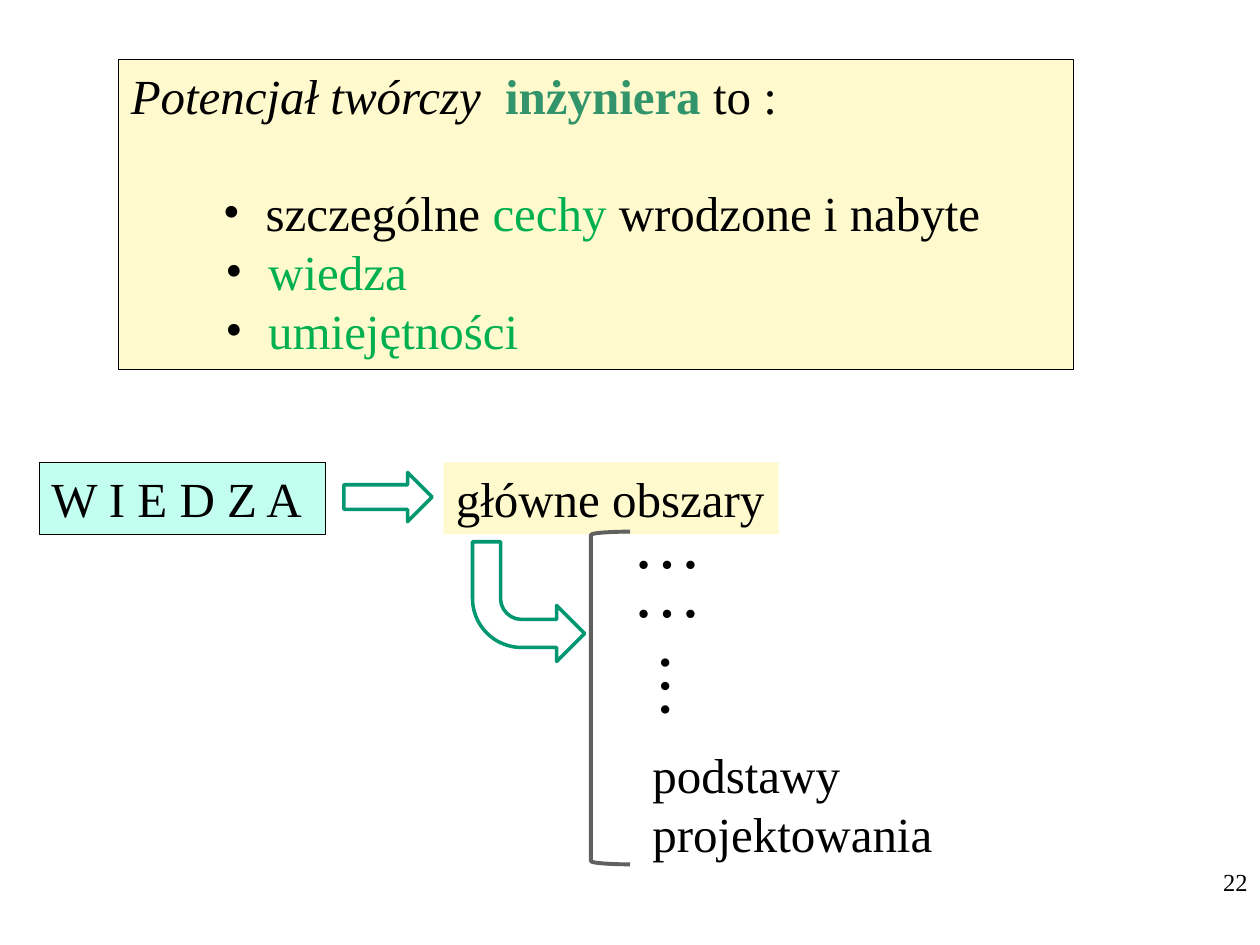
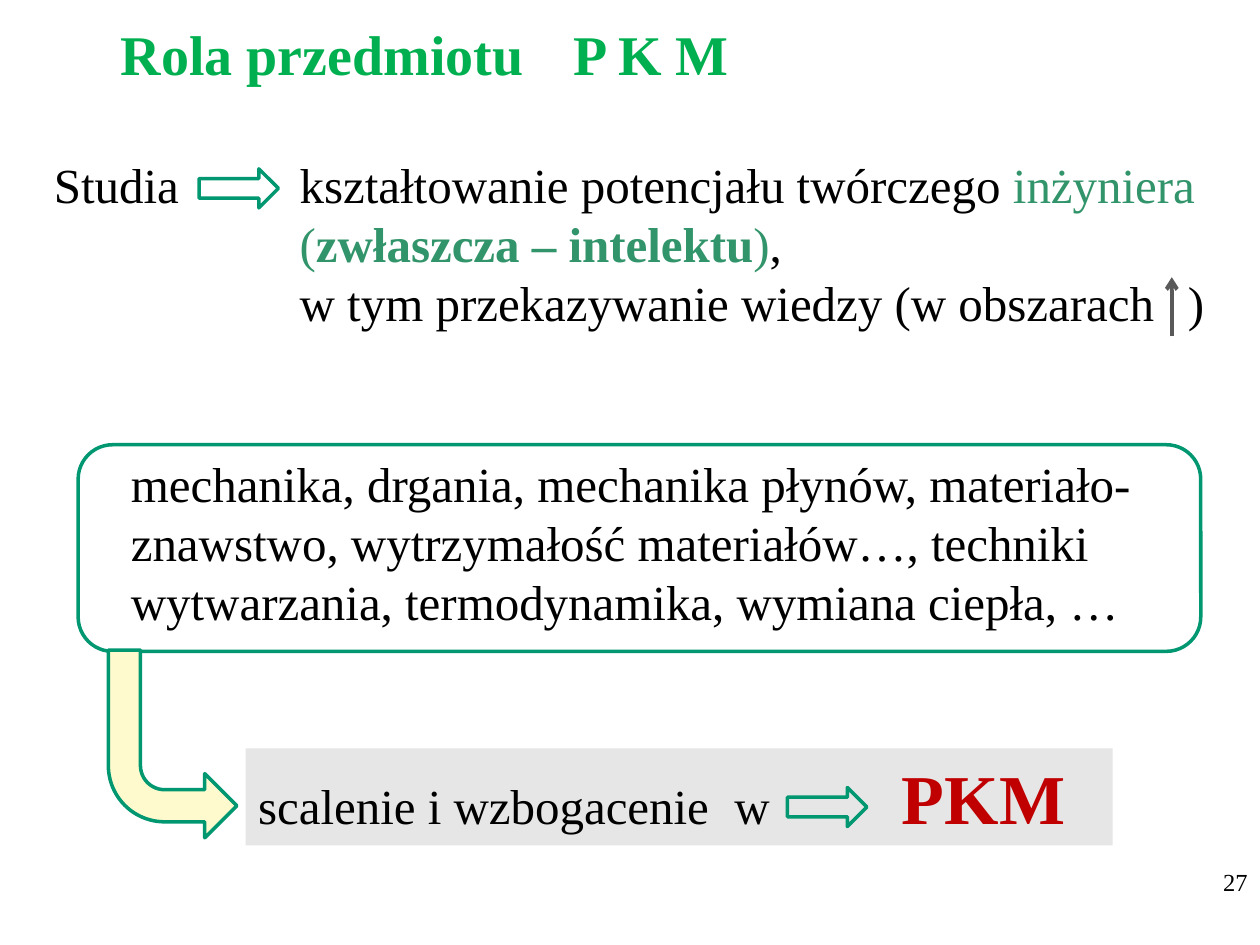
from dataclasses import dataclass
from typing import NamedTuple

from lxml import etree
from pptx import Presentation
from pptx.dml.color import RGBColor
from pptx.enum.shapes import MSO_CONNECTOR, MSO_SHAPE
from pptx.enum.text import MSO_ANCHOR, PP_ALIGN
from pptx.oxml.ns import qn
from pptx.util import Emu, Pt

EMU_PER_PX = 9144  # 100 px to the inch
SLIDE_WIDTH, SLIDE_HEIGHT = 1000, 750
BLANK_LAYOUT = 6
FONT_NAME = "Times New Roman"
BODY_SIZE, TITLE_SIZE, LARGE_SIZE, NUMBER_SIZE = 28, 32, 40, 14

BLACK, WHITE, GREY = "000000", "FFFFFF", "E6E6E6"
CREAM, MINT = "FFFACD", "C2FFF0"
GREEN, SEA_GREEN, ARROW_GREEN, RED = "00B050", "32946A", "009771", "C00000"
BRACKET_GREY, POINTER_GREY = "606060", "595959"

RECTANGLE = MSO_SHAPE.RECTANGLE
ROUNDED = MSO_SHAPE.ROUNDED_RECTANGLE
RIGHT_ARROW = MSO_SHAPE.RIGHT_ARROW
BENT_ARROW = MSO_SHAPE.BENT_ARROW
LEFT_BRACKET = MSO_SHAPE.LEFT_BRACKET
STRAIGHT = MSO_CONNECTOR.STRAIGHT
TOP = MSO_ANCHOR.TOP
LEFT, RIGHT = PP_ALIGN.LEFT, PP_ALIGN.RIGHT


class Span(NamedTuple):
    """Text that differs from the rest of its paragraph."""
    text: str
    color: str | None = None
    bold: bool | None = None
    italic: bool | None = None
    size: int | None = None


@dataclass(frozen=True)
class Line:
    spans: tuple[Span, ...]
    size: int = BODY_SIZE
    color: str = BLACK
    bold: bool = False
    align: PP_ALIGN = LEFT
    bullet_margin: int = 0
    space_before: float = 0
    tabs: tuple[int, ...] = ()


@dataclass(frozen=True)
class Box:
    left: int
    top: int
    width: int
    height: int
    lines: tuple[Line, ...] = ()
    kind: MSO_SHAPE | None = None
    fill: str | None = None
    outline: str | None = None
    outline_width: float = 0.5
    rotation: int = 0
    flipped: bool = False


def px(value: int) -> Emu:
    return Emu(value * EMU_PER_PX)


def rgb(color: str) -> RGBColor:
    return RGBColor.from_string(color)


def plain(text: str, **style) -> Line:
    return Line((Span(text),), **style)


def arrow(left: int, top: int, width: int, height: int,
          kind: MSO_SHAPE = RIGHT_ARROW, fill: str | None = None) -> Box:
    return Box(left, top, width, height, kind=kind, fill=fill, outline=ARROW_GREEN,
               outline_width=2, flipped=kind == BENT_ARROW)


def add_bullet(properties, margin: int) -> None:
    properties.set("marL", str(px(margin)))
    properties.set("indent", str(px(-34)))
    color = etree.SubElement(properties, qn("a:buClr"))
    etree.SubElement(color, qn("a:srgbClr"), val=BLACK)
    etree.SubElement(properties, qn("a:buFont"), typeface=FONT_NAME)
    etree.SubElement(properties, qn("a:buChar"), char="•")


def add_tabs(properties, tabs: tuple[int, ...]) -> None:
    tab_list = etree.SubElement(properties, qn("a:tabLst"))
    for position in tabs:
        etree.SubElement(tab_list, qn("a:tab"), pos=str(px(position)), algn="l")


def write_line(paragraph, line: Line) -> None:
    properties = paragraph._p.get_or_add_pPr()
    if line.bullet_margin:
        add_bullet(properties, line.bullet_margin)
    if line.tabs:
        add_tabs(properties, line.tabs)
    paragraph.alignment = line.align
    if line.space_before:
        paragraph.space_before = Pt(line.space_before)
    paragraph.font.name = FONT_NAME
    paragraph.font.size = Pt(line.size)
    paragraph.font.bold = line.bold
    paragraph.font.color.rgb = rgb(line.color)
    for span in line.spans:
        run = paragraph.add_run()
        run.text = span.text
        run.font.bold = span.bold
        run.font.italic = span.italic
        if span.color:
            run.font.color.rgb = rgb(span.color)
        if span.size:
            run.font.size = Pt(span.size)


def write_lines(text_frame, lines: tuple[Line, ...]) -> None:
    text_frame.word_wrap = True
    text_frame.vertical_anchor = TOP
    for index, line in enumerate(lines):
        paragraph = text_frame.add_paragraph() if index else text_frame.paragraphs[0]
        write_line(paragraph, line)


def draw_box(slide, box: Box) -> None:
    frame = [px(value) for value in (box.left, box.top, box.width, box.height)]
    if box.kind is None:
        shape = slide.shapes.add_textbox(*frame)
    else:
        shape = slide.shapes.add_shape(box.kind, *frame)
        shape.shadow.inherit = False
        if box.fill:
            shape.fill.solid()
            shape.fill.fore_color.rgb = rgb(box.fill)
        else:
            shape.fill.background()
        if box.outline:
            shape.line.color.rgb = rgb(box.outline)
            shape.line.width = Pt(box.outline_width)
        else:
            shape.line.fill.background()
    shape.rotation = box.rotation
    if box.flipped:
        shape._element.spPr.find(qn("a:xfrm")).set("flipV", "1")
    if box.lines:
        write_lines(shape.text_frame, box.lines)


def draw_pointer(slide, x: int, bottom: int, top: int) -> None:
    """Draw a thin arrow pointing straight up."""
    connector = slide.shapes.add_connector(STRAIGHT, px(x), px(bottom), px(x), px(top))
    connector.line.color.rgb = rgb(POINTER_GREY)
    connector.line.width = Pt(2.25)
    etree.SubElement(connector.line._get_or_add_ln(), qn("a:tailEnd"), type="arrow")
    etree.SubElement(connector._element.spPr, qn("a:effectLst"))


def add_slide(presentation, boxes: tuple[Box, ...], number: int):
    slide = presentation.slides.add_slide(presentation.slide_layouts[BLANK_LAYOUT])
    page_number = Box(717, 683, 283, 67,
                      (plain(str(number), size=NUMBER_SIZE, align=RIGHT),))
    for box in (*boxes, page_number):
        draw_box(slide, box)
    return slide


ELLIPSIS = (plain("…", size=LARGE_SIZE),)

POTENTIAL = (
    Line((Span("Potencjał twórczy", italic=True),
          Span("\tinżyniera ", SEA_GREEN, bold=True), Span("to :")), tabs=(297,)),
    Line((Span("szczególne "), Span("cechy ", GREEN), Span("wrodzone i nabyte")),
         bullet_margin=107, space_before=33.5),
    Line((Span("wiedza", GREEN),), bullet_margin=109),
    Line((Span("umiejętności", GREEN),), bullet_margin=109),
)

KNOWLEDGE_BOXES = (
    Box(94, 47, 758, 246, POTENTIAL, RECTANGLE, CREAM, BLACK),
    Box(31, 367, 227, 57, (plain("W I E D Z A"),), RECTANGLE, MINT, BLACK),
    arrow(273, 375, 70, 39),
    Box(352, 367, 266, 57, (plain("główne obszary"),), RECTANGLE, CREAM),
    arrow(375, 430, 89, 95, BENT_ARROW),
    Box(492, 391, 262, 77, ELLIPSIS),
    Box(492, 430, 160, 77, ELLIPSIS),
    Box(485, 531, 125, 78, ELLIPSIS, rotation=90),
    Box(508, 586, 305, 104, (plain("podstawy"), plain("projektowania"))),
    Box(469, 422, 31, 264, kind=LEFT_BRACKET, outline=BRACKET_GREY, outline_width=2.25),
)

TITLE_STYLE = dict(size=TITLE_SIZE, color=GREEN, bold=True)
STUDY_TABS = (195, 900)
STUDIES = (
    Line((Span("Studia\tkształtowanie potencjału twórczego "),
          Span("inżyniera", SEA_GREEN)), tabs=STUDY_TABS),
    Line((Span("\t(", SEA_GREEN), Span("zwłaszcza – intelektu", SEA_GREEN, bold=True),
          Span(")", SEA_GREEN), Span(",")), tabs=STUDY_TABS),
    plain("\tw tym przekazywanie wiedzy (w obszarach\t)", tabs=STUDY_TABS),
)
SUBJECTS = (
    plain("mechanika, drgania, mechanika płynów, materiało-"),
    plain("znawstwo, wytrzymałość materiałów…, techniki wytwarzania, "
          "termodynamika, wymiana ciepła, …"),
)
MERGING = (
    Line((Span("scalenie i wzbogacenie\tw\t"),
          Span("PKM", RED, bold=True, size=LARGE_SIZE)), tabs=(378, 511)),
)

ROLE_BOXES = (
    Box(86, 11, 554, 64, (plain("Rola przedmiotu", **TITLE_STYLE),)),
    Box(445, 11, 156, 64, (plain("P K M", **TITLE_STYLE),), RECTANGLE, WHITE),
    Box(33, 118, 938, 151, STUDIES),
    arrow(158, 134, 63, 31),
    Box(62, 353, 891, 164, kind=ROUNDED, outline=ARROW_GREEN, outline_width=2),
    Box(94, 355, 852, 151, SUBJECTS),
    Box(195, 594, 688, 77, MERGING, RECTANGLE, GREY),
    arrow(625, 625, 63, 31),
    arrow(86, 516, 102, 149, BENT_ARROW, CREAM),
)


def main() -> None:
    presentation = Presentation()
    presentation.slide_width = px(SLIDE_WIDTH)
    presentation.slide_height = px(SLIDE_HEIGHT)
    add_slide(presentation, KNOWLEDGE_BOXES, 22)
    role_slide = add_slide(presentation, ROLE_BOXES, 27)
    draw_pointer(role_slide, 930, 267, 220)
    presentation.save("out.pptx")


if __name__ == "__main__":
    main()
